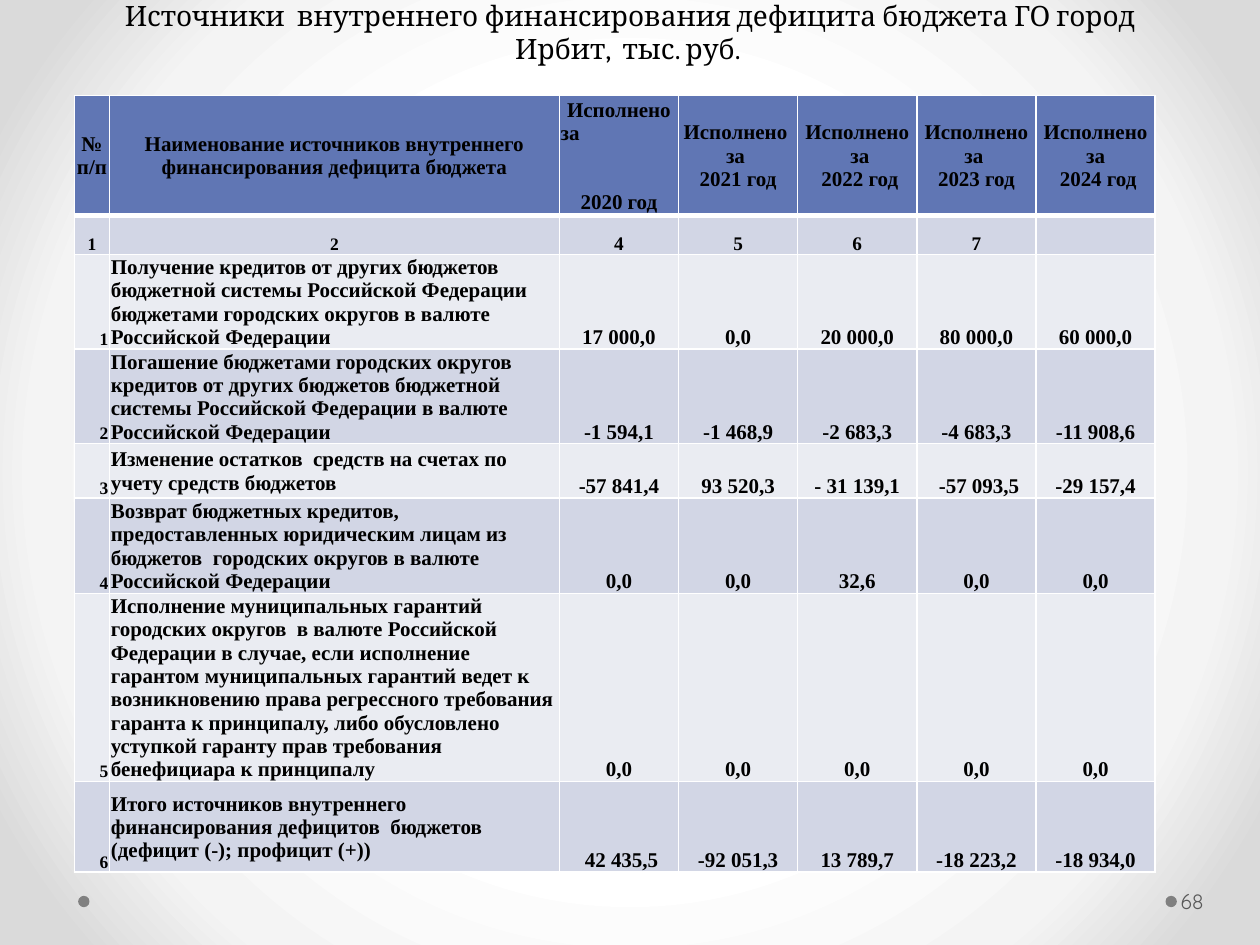
"""Builds the slide on sources of internal financing of the city budget deficit."""
from lxml import etree
from pptx import Presentation
from pptx.dml.color import RGBColor
from pptx.enum import shapes, text
from pptx.oxml import ns, parse_xml
from pptx.util import Inches, Pt

COLORS = {"head": "6076B4", "band": "D2D6E5", "light": "EAECF2", "line": "FFFFFF",
          "text": "000000", "number": "595959", "dot": "808080"}
BACKDROP = [(0, "FFFFFF"), (50, "FFFFFF"), (76, "F4F4F4"), (92, "DADADA"), (100, "DADADA")]
ALIGN = text.PP_ALIGN
ANCHOR = text.MSO_ANCHOR

TABLE_WIDTH = 8.58
LEADING = 1.11
LABEL_COLUMNS = [0.28, 3.57]
COLUMNS = LABEL_COLUMNS + [(TABLE_WIDTH - sum(LABEL_COLUMNS)) / 5] * 5
ROWS = [0.95, 0.3, 0.65, 0.67, 0.43, 0.76, 1.28, 0.72]
HEADINGS = ["№ п/п", "Наименование источников внутреннего финансирования дефицита бюджета",
            "Исполнено\nза\n2020 год", "Исполнено \nза \n2021 год",
            "Исполнено\n за\n 2022 год", "Исполнено за \n2023 год", "Исполнено за\n 2024 год"]
NUMBERING = ["1", "2", "4", "5", "6", "7", ""]
SOURCES = [
    ["Получение кредитов от других бюджетов бюджетной системы Российской Федерации "
     "бюджетами городских округов в валюте Российской Федерации",
     "17 000,0", "0,0", "20 000,0", "80 000,0", "60 000,0"],
    ["Погашение бюджетами городских округов кредитов от других бюджетов бюджетной "
     "системы Российской Федерации в валюте Российской Федерации",
     "-1 594,1", "-1 468,9", "-2 683,3", "-4 683,3", "-11 908,6"],
    ["Изменение остатков  средств на счетах по учету средств бюджетов",
     "-57 841,4", "93 520,3", "- 31 139,1", " -57 093,5", "-29 157,4"],
    ["Возврат бюджетных кредитов, предоставленных юридическим лицам из бюджетов  "
     "городских округов в валюте Российской Федерации",
     "0,0", "0,0", "32,6", "0,0", "0,0"],
    ["Исполнение муниципальных гарантий городских округов  в валюте Российской Федерации "
     "в случае, если исполнение гарантом муниципальных гарантий ведет к возникновению "
     "права регрессного требования гаранта к принципалу, либо обусловлено уступкой "
     "гаранту прав требования бенефициара к принципалу",
     "0,0", "0,0", "0,0", "0,0", "0,0"],
    ["Итого источников внутреннего  финансирования дефицитов  бюджетов "
     "(дефицит (-); профицит (+))",
     " 42 435,5", "-92 051,3", "13 789,7", "-18 223,2", "-18 934,0"],
]


def color(name):
    """Return the named colour."""
    return RGBColor.from_string(COLORS[name])


def format_runs(frame, size, font, ink, align, bold=False):
    """Format every paragraph and run of a text frame."""
    for paragraph in frame.paragraphs:
        paragraph.alignment = align
        for run in paragraph.runs:
            run.font.size = Pt(size)
            run.font.name = font
            run.font.bold = bold
            run.font.color.rgb = color(ink)


def paint_background(slide):
    """Fill the background with a circular gradient."""
    slide.background.fill.gradient()
    gradient = slide.background._cSld.find(".//" + ns.qn("a:gradFill"))
    stops = "".join(f'<a:gs pos="{pos * 1000}"><a:srgbClr val="{tint}"/></a:gs>'
                    for pos, tint in BACKDROP)
    gradient.getparent().replace(gradient, parse_xml(
        f'<a:gradFill {ns.nsdecls("a")} rotWithShape="1"><a:gsLst>{stops}</a:gsLst>'
        '<a:path path="circle"><a:fillToRect l="50000" t="50000" r="50000" b="50000"/>'
        '</a:path></a:gradFill>'))


def add_dot(slide, left, top, size):
    """Add a footer dot."""
    dot = slide.shapes.add_shape(shapes.MSO_SHAPE.OVAL, left, top, size, size)
    dot.shadow.inherit = False
    dot.fill.solid()
    dot.fill.fore_color.rgb = color("dot")
    dot.line.fill.background()


def add_title(slide, left, top, width, height):
    """Add the centred slide title."""
    frame = slide.shapes.add_textbox(left, top, width, height).text_frame
    frame.word_wrap = True
    frame.vertical_anchor = ANCHOR.BOTTOM
    frame.margin_bottom = Inches(0.32)
    frame.text = ("Источники  внутреннего финансирования дефицита бюджета "
                  "ГО город Ирбит,  тыс. руб. ")
    format_runs(frame, 16, "Cambria", "text", ALIGN.CENTER)


def add_page_number(slide, left, top, width, height):
    """Add the page number."""
    frame = slide.shapes.add_textbox(left, top, width, height).text_frame
    frame.word_wrap = True
    frame.vertical_anchor = ANCHOR.MIDDLE
    frame.margin_left, frame.margin_right = Inches(0.03), Inches(0.05)
    frame.text = "68"
    format_runs(frame, 12, "Quicksand", "number", ALIGN.LEFT)


def add_borders(cell, bottom):
    """Draw white borders around a cell."""
    properties = cell._tc.get_or_add_tcPr()
    widths = {"lnL": 1, "lnR": 1, "lnT": 1, "lnB": bottom}
    for index, (side, width) in enumerate(widths.items()):
        line = etree.Element(ns.qn("a:" + side), w=str(Pt(width)))
        fill = etree.SubElement(line, ns.qn("a:solidFill"))
        etree.SubElement(fill, ns.qn("a:srgbClr"), val=COLORS["line"])
        properties.insert(index, line)


def cell_style(row, column):
    """Return text size, alignment and anchor for a table position."""
    if row == 0:
        return 12, ALIGN.CENTER, ANCHOR.MIDDLE
    if row == 1:
        return (10 if column < 2 else 11), ALIGN.CENTER, ANCHOR.BOTTOM
    if column == 0:
        return 10, ALIGN.RIGHT, ANCHOR.BOTTOM
    if column == 1:
        return 12, ALIGN.LEFT, ANCHOR.MIDDLE
    return 12, ALIGN.CENTER, ANCHOR.BOTTOM


def add_sources_table(slide, left, top, width, height):
    """Add the table of financing sources by year."""
    body = [[str(number), *source] for number, source in enumerate(SOURCES, 1)]
    records = [HEADINGS, NUMBERING, *body]
    table = slide.shapes.add_table(len(ROWS), len(COLUMNS), left, top, width, height).table
    for column, column_width in zip(table.columns, COLUMNS):
        column.width = Inches(column_width)
    for row, row_height in zip(table.rows, ROWS):
        row.height = Inches(row_height)
    for r, record in enumerate(records):
        shade = "head" if r == 0 else "band" if r % 2 else "light"
        for c, entry in enumerate(record):
            cell = table.cell(r, c)
            size, align, cell.vertical_anchor = cell_style(r, c)
            cell.margin_left = cell.margin_right = cell.margin_top = Inches(0.01)
            cell.margin_bottom = 0
            cell.fill.solid()
            cell.fill.fore_color.rgb = color(shade)
            cell.text_frame.text = entry
            format_runs(cell.text_frame, size, "Times New Roman", "text", align, bold=True)
            for paragraph in cell.text_frame.paragraphs:
                paragraph.line_spacing = Pt(size * LEADING)
            add_borders(cell, 3 if r == 0 else 1)
    preposition, year = table.cell(0, 2).text_frame.paragraphs[1:]
    preposition.alignment = ALIGN.LEFT
    year.space_before = Pt(26)


def main():
    """Build and save the slide."""
    deck = Presentation()
    deck.slide_width, deck.slide_height = Inches(10), Inches(7.5)
    slide = deck.slides.add_slide(deck.slide_layouts[6])
    paint_background(slide)
    for left in (9.25, 0.62):
        add_dot(slide, Inches(left), Inches(7.11), Inches(0.09))
    add_title(slide, Inches(0.51), Inches(0.21), Inches(8.99), Inches(0.63))
    add_sources_table(slide, Inches(0.59), Inches(0.76),
                      Inches(TABLE_WIDTH), Inches(sum(ROWS)))
    add_page_number(slide, Inches(9.34), Inches(6.95), Inches(0.61), Inches(0.4))
    deck.save("out.pptx")


if __name__ == "__main__":
    main()
